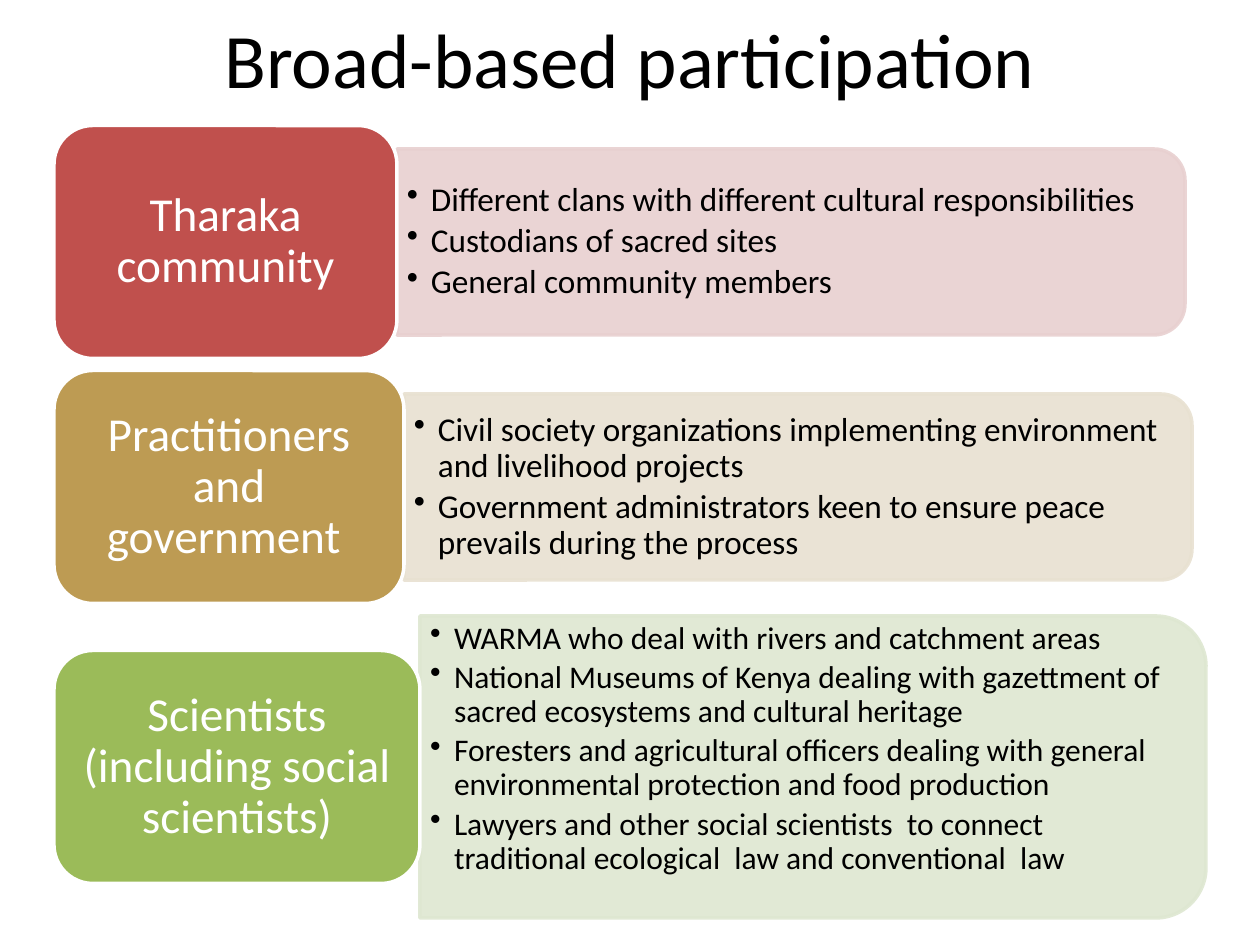
from pptx import Presentation
from pptx.dml.color import RGBColor
from pptx.enum.shapes import MSO_SHAPE as Shape
from pptx.enum.text import MSO_ANCHOR as Anchor, PP_ALIGN as Align
from pptx.oxml.ns import qn
from pptx.util import Emu, Pt
from lxml.etree import SubElement

SCALE = 914400 / 126
LABEL_LEFT, LABEL_HEIGHT = 54, 233
TEXT_MARGIN = 17

ROWS = [
    {
        "label": "Tharaka community", "color": "C0504D", "tint": "E8D0D0",
        "panel": (397, 149, 788, 186), "size": 19, "lift": 0,
        "items": [
            "Different clans with different cultural responsibilities",
            "Custodians of sacred sites",
            "General community members",
        ],
    },
    {
        "label": "Practitioners and government ", "color": "BD9B53", "tint": "E8E1D1",
        "panel": (404, 394, 788, 186), "size": 19, "lift": 0,
        "items": [
            "Civil society organizations implementing environment and livelihood projects",
            "Government administrators keen to ensure peace prevails during the process",
        ],
    },
    {
        "label": "Scientists (including social scientists)", "color": "9BBB59", "tint": "DEE7D1",
        "panel": (420, 616, 786, 302), "size": 18, "lift": 18,
        "items": [
            "WARMA who deal with rivers and catchment areas",
            "National Museums of Kenya dealing with gazettment of sacred ecosystems and cultural heritage",
            "Foresters and agricultural officers dealing with general environmental protection and food production",
            "Lawyers and other social scientists  to connect  traditional ecological  law and conventional  law",
        ],
    },
]


def px(length):
    return Emu(round(length * SCALE))


def rgb(value):
    return RGBColor.from_string(value)


class SlideBuilder:
    font = "Calibri"
    dark = "000000"
    light = "FFFFFF"

    def __init__(self, slide):
        self.slide = slide

    def style(self, paragraph, size, color):
        paragraph.font.name = self.font
        paragraph.font.size = Pt(size)
        paragraph.font.color.rgb = rgb(color)

    def frame(self, shape, horizontal, vertical):
        frame = shape.text_frame
        frame.word_wrap = True
        frame.vertical_anchor = Anchor.MIDDLE
        frame.margin_left = frame.margin_right = px(horizontal)
        frame.margin_top = frame.margin_bottom = px(vertical)
        return frame

    def shape(self, kind, box, fill, line):
        shape = self.slide.shapes.add_shape(kind, *map(px, box))
        shape.shadow.inherit = False
        shape.fill.solid()
        shape.fill.fore_color.rgb = rgb(fill)
        shape.line.color.rgb = rgb(line)
        shape.line.width = Pt(2)
        return shape

    def title(self, text, box):
        frame = self.frame(self.slide.shapes.add_textbox(*map(px, box)), 13, 6)
        paragraph = frame.paragraphs[0]
        paragraph.text = text
        paragraph.alignment = Align.CENTER
        self.style(paragraph, 44, self.dark)

    def panel(self, box, tint):
        left, top, width, height = box
        turn = (width - height) / 2
        shape = self.shape(Shape.ROUND_2_SAME_RECTANGLE,
                           (left + turn, top - turn, height, width), tint, tint)
        shape.rotation = 90
        for color in shape._element.spPr.iter(qn("a:srgbClr")):
            SubElement(color, qn("a:alpha"), val="90000")

    def bullets(self, items, box, size):
        frame = self.frame(self.slide.shapes.add_textbox(*map(px, box)), 10, 5)
        for index, item in enumerate(items):
            paragraph = frame.add_paragraph() if index else frame.paragraphs[0]
            paragraph.text = item
            paragraph.line_spacing = 0.9
            paragraph.space_after = Pt(3)
            self.style(paragraph, size, self.dark)
            properties = paragraph._p.get_or_add_pPr()
            properties.set("marL", str(px(24)))
            properties.set("indent", str(-px(24)))
            bullet = properties.makeelement(qn("a:buChar"), {"char": "•"})
            properties.insert_element_before(bullet, "a:tabLst", "a:defRPr", "a:extLst")

    def label(self, text, box, color):
        shape = self.shape(Shape.ROUNDED_RECTANGLE, box, color, self.light)
        paragraph = self.frame(shape, 18, 15).paragraphs[0]
        paragraph.text = text
        paragraph.alignment = Align.CENTER
        paragraph.line_spacing = 0.9
        self.style(paragraph, 27, self.light)


def main():
    presentation = Presentation()
    presentation.slide_width, presentation.slide_height = px(1260), px(945)
    builder = SlideBuilder(presentation.slides.add_slide(presentation.slide_layouts[6]))
    builder.title("Broad-based participation", (63, 0, 1134, 116))
    for row in ROWS:
        left, top, width, height = row["panel"]
        builder.panel(row["panel"], row["tint"])
        text_top = top + TEXT_MARGIN / 2 - row["lift"]
        builder.bullets(row["items"],
                        (left, text_top, width - TEXT_MARGIN / 2, height - TEXT_MARGIN),
                        row["size"])
        label_top = top + (height - LABEL_HEIGHT) / 2
        builder.label(row["label"],
                      (LABEL_LEFT, label_top, left - LABEL_LEFT, LABEL_HEIGHT),
                      row["color"])
    presentation.save("out.pptx")


if __name__ == "__main__":
    main()
